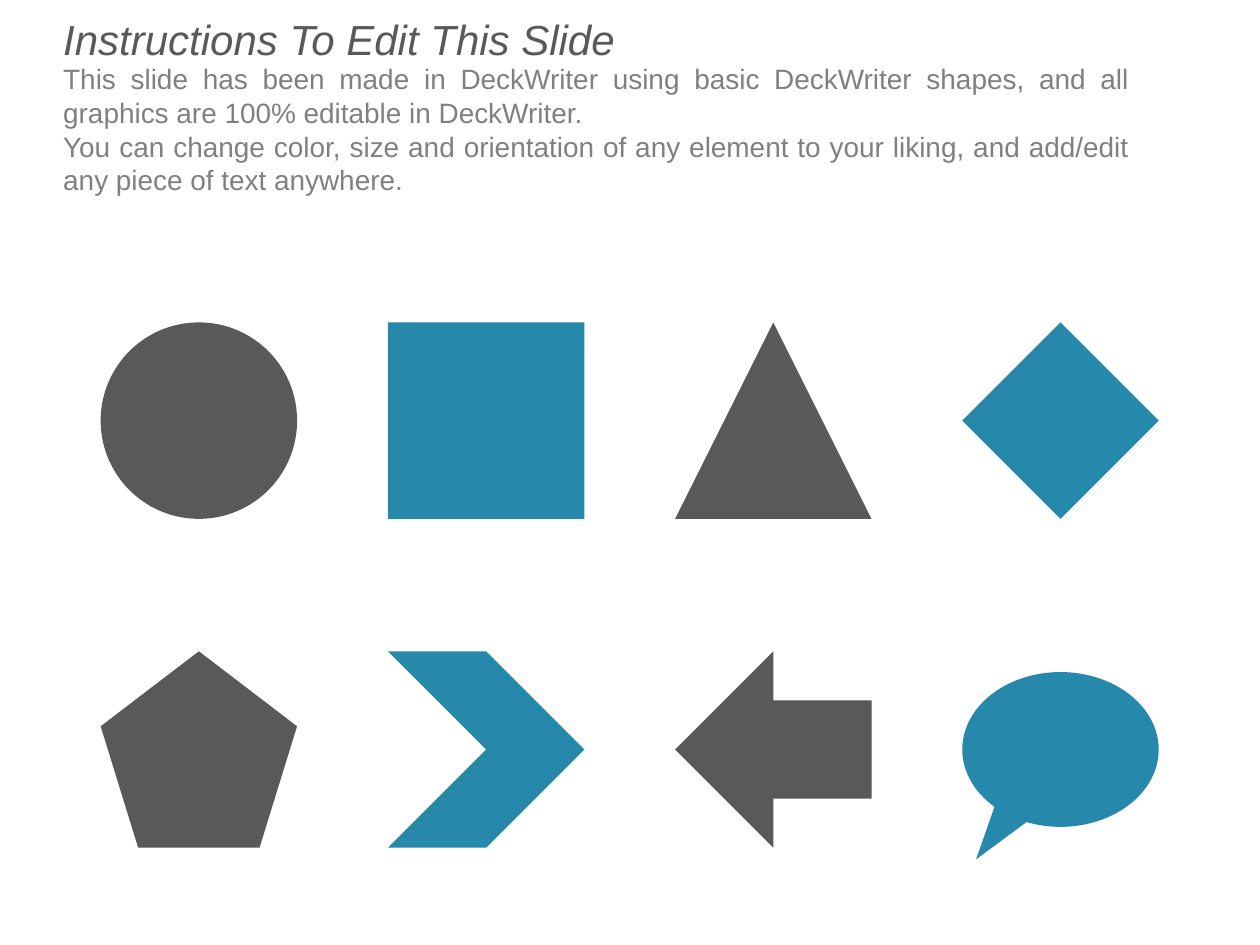
import pptx
import pptx.dml.color
import pptx.enum.shapes
import pptx.enum.text
import pptx.util
from lxml import etree

Cm = pptx.util.Cm
Pt = pptx.util.Pt
Kind = pptx.enum.shapes.MSO_SHAPE
Align = pptx.enum.text.PP_ALIGN

COLORS = {"dark": "595959", "grey": "808080", "blue": "2688AA"}
INSTRUCTIONS = [
    "This slide has been made in DeckWriter using basic DeckWriter shapes, "
    "and all graphics are 100% editable in DeckWriter.",
    "You can change color, size and orientation of any element to your liking, "
    "and add/edit any piece of text anywhere.",
]
SHAPE_ROWS = [
    [Kind.OVAL, Kind.RECTANGLE, Kind.ISOSCELES_TRIANGLE, Kind.DIAMOND],
    [Kind.REGULAR_PENTAGON, Kind.CHEVRON, Kind.LEFT_ARROW, Kind.OVAL_CALLOUT],
]
GRID_LEFT, GRID_TOP = 2.03, 6.5
COLUMN_STEP, ROW_STEP = 5.79, 6.63
SHAPE_SIZE, CALLOUT_HEIGHT = 3.96, 3.12


class SlideBuilder:
    """Holds the style and the current slide, and adds each kind of element."""

    font = "Arial"

    def __init__(self, slide):
        self.slide = slide

    def color(self, name):
        return pptx.dml.color.RGBColor.from_string(COLORS[name])

    def placeholder(self, holder, lines, box, size, color, align, italic=False):
        holder.left, holder.top, holder.width, holder.height = map(Cm, box)
        frame = holder.text_frame
        frame.text = "\n".join(lines)
        frame.word_wrap = True
        frame.auto_size = pptx.enum.text.MSO_AUTO_SIZE.NONE
        frame.vertical_anchor = pptx.enum.text.MSO_ANCHOR.TOP
        frame.margin_bottom = 0
        for paragraph in frame.paragraphs:
            paragraph.alignment = align
            paragraph.space_before = Pt(0)
            for run in paragraph.runs:
                run.font.name = self.font
                run.font.size = Pt(size)
                run.font.italic = italic
                run.font.color.rgb = self.color(color)
        return frame

    def title(self, text):
        self.placeholder(self.slide.shapes.title, [text], (1.02, 0.15, 22, 1.1),
                         24, "dark", Align.LEFT, italic=True)

    def body(self, lines):
        frame = self.placeholder(self.slide.placeholders[1], lines,
                                 (1.02, 1.25, 22, 2.91), 16, "grey", Align.JUSTIFY)
        frame.margin_top = 0
        for paragraph in frame.paragraphs:
            properties = paragraph._p.get_or_add_pPr()
            properties.set("marL", "0")
            properties.set("indent", "0")
            etree.SubElement(properties, pptx.oxml.ns.qn("a:buNone"))

    def shape(self, kind, left, top, width, height, color):
        shape = self.slide.shapes.add_shape(kind, Cm(left), Cm(top), Cm(width), Cm(height))
        shape.shadow.inherit = False
        shape.fill.solid()
        shape.fill.fore_color.rgb = self.color(color)
        shape.line.fill.background()
        return shape

    def shape_grid(self, rows):
        for row, kinds in enumerate(rows):
            for column, kind in enumerate(kinds):
                is_callout = kind == Kind.OVAL_CALLOUT
                height = CALLOUT_HEIGHT if is_callout else SHAPE_SIZE
                top = GRID_TOP + row * ROW_STEP + (SHAPE_SIZE - height) / 2
                shape = self.shape(kind, GRID_LEFT + column * COLUMN_STEP, top,
                                   SHAPE_SIZE, height, ("dark", "blue")[column % 2])
                if is_callout:
                    shape.adjustments[0] = -0.43
                    shape.adjustments[1] = 0.71


def main():
    presentation = pptx.Presentation()
    presentation.slide_width = Cm(25.4)
    presentation.slide_height = Cm(19.05)
    builder = SlideBuilder(presentation.slides.add_slide(presentation.slide_layouts[1]))
    builder.title("Instructions To Edit This Slide")
    builder.body(INSTRUCTIONS)
    builder.shape_grid(SHAPE_ROWS)
    presentation.save("out.pptx")


if __name__ == "__main__":
    main()
